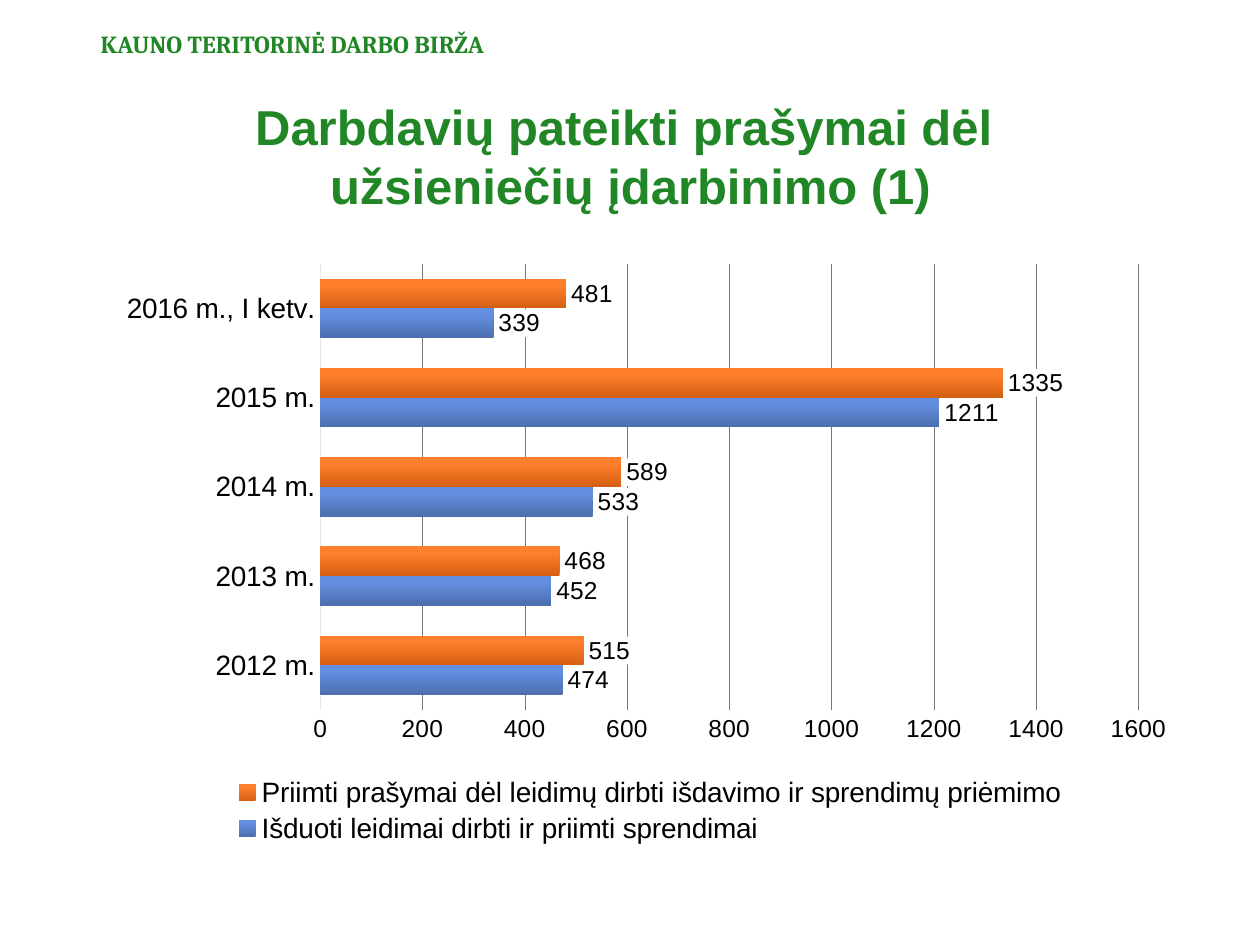
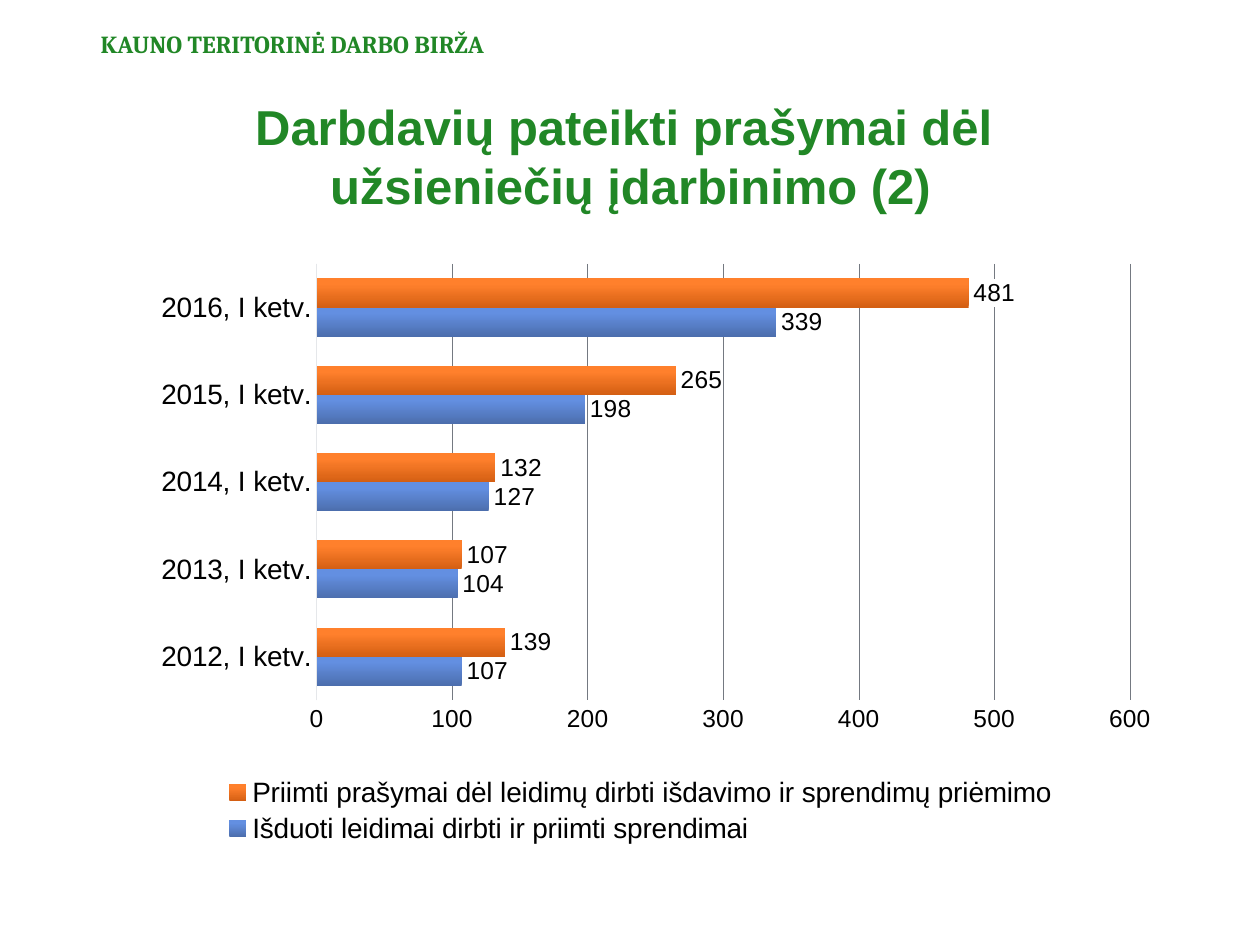
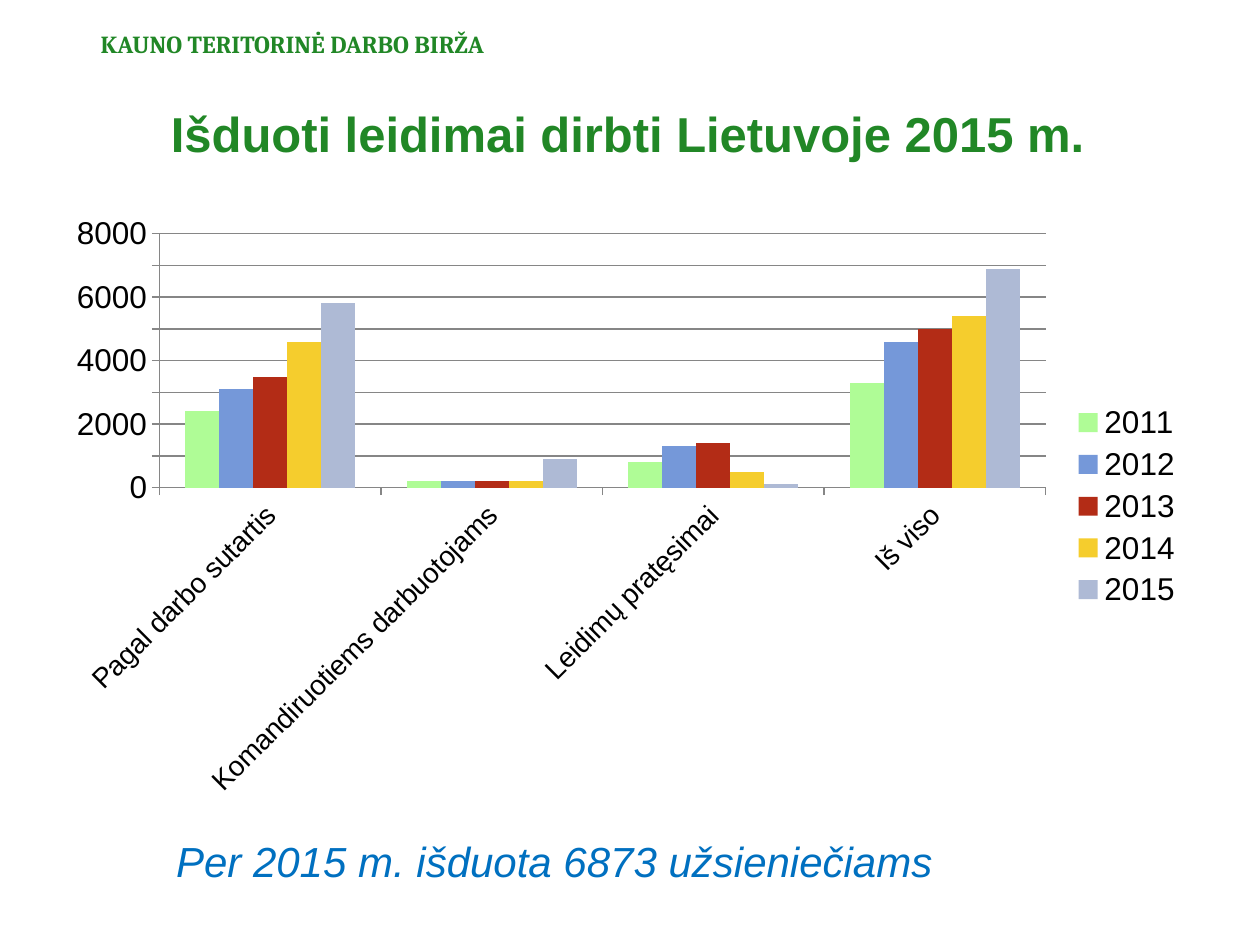
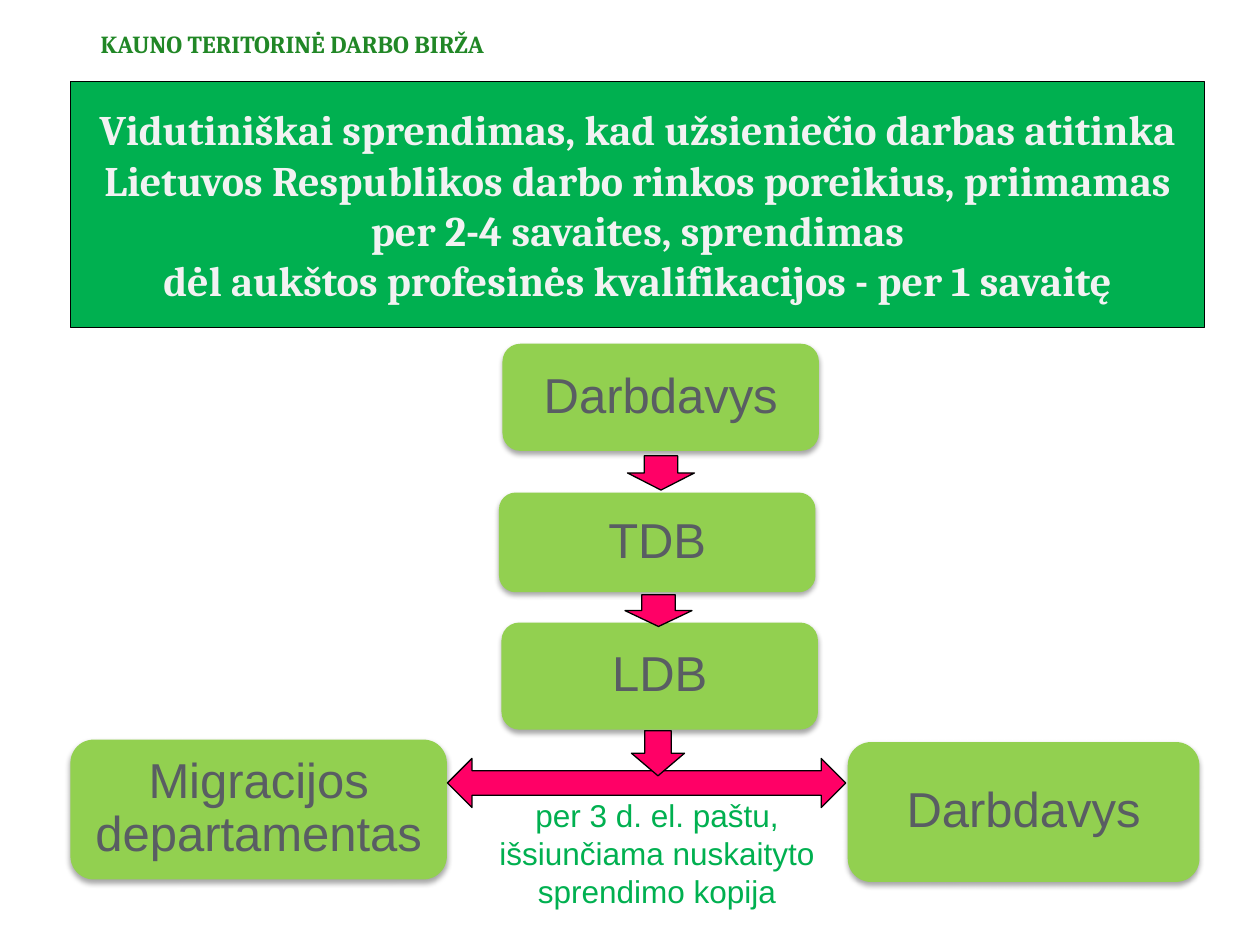
from pptx import Presentation
from pptx.chart.data import CategoryChartData
from pptx.dml.color import RGBColor
from pptx.enum import chart as ch, shapes as sh, text as tx
from pptx.oxml import parse_xml
from pptx.oxml.ns import nsdecls, qn
from pptx.util import Cm, Pt

BLACK = RGBColor(0x00, 0x00, 0x00)
PALE = RGBColor(0xF2, 0xF2, 0xF2)
GREEN = RGBColor(0x21, 0x87, 0x26)
BAND = RGBColor(0x00, 0xB0, 0x50)
LIME = RGBColor(0x92, 0xD0, 0x50)
PINK = RGBColor(0xFF, 0x00, 0x66)
BLUE = RGBColor(0x00, 0x70, 0xC0)
SLATE = RGBColor(0x59, 0x5D, 0x63)
AXIS = RGBColor(0xE5, 0xE7, 0xEA)
GRID = RGBColor(0x74, 0x79, 0x81)
GRAY = RGBColor(0x86, 0x86, 0x86)
FADES = [(RGBColor(0x4C, 0x6E, 0xAD), RGBColor(0x63, 0x8F, 0xE1)),
         (RGBColor(0xD4, 0x5F, 0x13), RGBColor(0xFF, 0x80, 0x2C))]
HUES = [RGBColor(0xAF, 0xFC, 0x96), RGBColor(0x75, 0x98, 0xD9),
        RGBColor(0xB3, 0x2C, 0x16), RGBColor(0xF5, 0xCD, 0x2D),
        RGBColor(0xAE, 0xBA, 0xD5)]

HEAD = dict(name="Cambria", size=Pt(14), bold=True)
TITLE = dict(name="Arial", size=Pt(28), bold=True)
LEAD = dict(name="Cambria", size=Pt(24), bold=True)
NOTE = dict(name="Arial", size=Pt(24), italic=True)
HINT = dict(name="Arial", size=Pt(18))
STEP = dict(name="Arial", size=Pt(28))

MID, TOP = tx.MSO_ANCHOR.MIDDLE, tx.MSO_ANCHOR.TOP
LEFT, CENTER = tx.PP_ALIGN.LEFT, tx.PP_ALIGN.CENTER
FORM = sh.MSO_SHAPE


def put(shape, words, form, hue, align=CENTER, anchor=MID):
    """Write words into a shape in one text format."""
    frame = shape.text_frame
    frame.word_wrap = True
    frame.vertical_anchor = anchor
    frame.text = words
    para = frame.paragraphs[0]
    para.alignment = align
    for key, val in form.items():
        setattr(para.runs[0].font, key, val)
    for run in para.runs:
        for key, val in form.items():
            setattr(run.font, key, val)
        run.font.color.rgb = hue
    return para


def graph(slide, kind, box, cats, rows, size, gap, place):
    """Add a chart with the shared font, legend and bar settings."""
    data = CategoryChartData()
    data.categories = cats
    for name, vals in rows.items():
        data.add_series(name, vals)
    chart = slide.shapes.add_chart(kind, *map(Cm, box), data).chart
    chart.has_title = False
    chart.font.name, chart.font.size = "Arial", Pt(size)
    chart.font.color.rgb = BLACK
    chart.has_legend = True
    chart.legend.position = place
    chart.legend.include_in_layout = False
    plot = chart.plots[0]
    plot.gap_width, plot.overlap, plot.vary_by_categories = gap, 0, False
    for row in plot.series:
        row.invert_if_negative = False
    return chart


deck = Presentation()
deck.slide_width, deck.slide_height = Cm(25.4), Cm(19.05)
for _ in range(4):
    page = deck.slides.add_slide(deck.slide_layouts[6])
    head = page.shapes.add_textbox(Cm(1.78), Cm(0.46), Cm(13.41), Cm(0.86))
    put(head, "KAUNO TERITORINĖ DARBO BIRŽA", HEAD, GREEN, LEFT, TOP)
pages = list(deck.slides)

# Titles of the chart slides
ASK = "Darbdavių pateikti prašymai dėl \vužsieniečių įdarbinimo "
titles = [(0.71, 2.13, ASK + "(1)"), (0.71, 2.13, ASK + "(2)"),
          (0.79, 1.68, "Išduoti leidimai dirbti Lietuvoje 2015 m. ")]
for page, (x, y, words) in zip(pages, titles):
    box = page.shapes.add_textbox(Cm(x), Cm(y), Cm(24), Cm(2.01))
    put(box, words, TITLE, GREEN)

# Slides 1 and 2: requests and permits as bars
YEARS = range(2012, 2017)
GIVEN = "Išduoti leidimai dirbti ir priimti sprendimai"
ASKED = "Priimti prašymai dėl leidimų dirbti išdavimo ir sprendimų priėmimo"
bars = [
    (21.59, [f"{y} m." for y in YEARS[:-1]] + ["2016 m., I ketv."],
     {GIVEN: (474, 452, 533, 1211, 339), ASKED: (515, 468, 589, 1335, 481)},
     dict(x=0.192, y=0.032, w=0.764, h=0.738)),
    (21.21, [f"{y}, I ketv." for y in YEARS],
     {GIVEN: (107, 104, 127, 198, 339), ASKED: (139, 107, 132, 265, 481)},
     dict(x=0.192, y=0.032, w=0.773, h=0.722)),
]
for page, (wide, cats, rows, area) in zip(pages, bars):
    chart = graph(page, ch.XL_CHART_TYPE.BAR_CLUSTERED, (2.31, 4.93, wide, 12.19),
                  cats, rows, 16, 100, ch.XL_LEGEND_POSITION.BOTTOM)
    for axis in (chart.category_axis, chart.value_axis):
        axis.major_tick_mark = axis.minor_tick_mark = ch.XL_TICK_MARK.NONE
    line = chart.category_axis.format.line
    line.color.rgb, line.width = AXIS, Pt(0.75)
    axis = chart.value_axis
    axis.tick_labels.font.size = Pt(14)
    axis.format.line.fill.background()
    line = axis.major_gridlines.format.line
    line.color.rgb, line.width = GRID, Pt(0.25)

    for row, fade in zip(chart.plots[0].series, FADES):
        fill = row.format.fill
        fill.gradient()
        fill.gradient_angle = 90
        for stop, hue, spot in zip(fill.gradient_stops, fade, (0, 0.8)):
            stop.color.rgb, stop.position = hue, spot
        tags = row.data_labels
        tags.show_value = True
        tags.font.name, tags.font.size = "Arial", Pt(14)
        tags.font.color.rgb = BLACK
        tags.position = ch.XL_LABEL_POSITION.OUTSIDE_END
        tags._element.find(qn("c:txPr")).addprevious(parse_xml(
            f'<c:spPr {nsdecls("c", "a")}><a:solidFill>'
            '<a:srgbClr val="FFFFFF"/></a:solidFill></c:spPr>'))

    frame = chart._chartSpace.chart.plotArea
    for old in frame.findall(qn("c:layout")):
        frame.remove(old)
    spots = "".join(f'<c:{k} val="{v}"/>' for k, v in area.items())
    frame.insert(0, parse_xml(
        f'<c:layout {nsdecls("c")}><c:manualLayout><c:layoutTarget val="inner"/>'
        f'<c:xMode val="edge"/><c:yMode val="edge"/>{spots}'
        '</c:manualLayout></c:layout>'))

# Slide 3: permits by kind and year
page = pages[2]
kinds = ["Pagal darbo sutartis", "Komandiruotiems darbuotojams",
         "Leidimų pratęsimai", "Iš viso"]
rows = {"2011": (2400, 200, 800, 3300), "2012": (3100, 200, 1300, 4600),
        "2013": (3500, 200, 1400, 5000), "2014": (4600, 200, 500, 5400),
        "2015": (5800, 900, 100, 6900)}
chart = graph(page, ch.XL_CHART_TYPE.COLUMN_CLUSTERED, (1.09, 4.11, 23.01, 12.19),
              kinds, rows, 18, 150, ch.XL_LEGEND_POSITION.RIGHT)
for row, hue in zip(chart.plots[0].series, HUES):
    row.format.fill.solid()
    row.format.fill.fore_color.rgb = hue
axis = chart.category_axis
axis.tick_labels.font.size = Pt(16)
axis._element.txPr.find(qn("a:bodyPr")).set("rot", "-2700000")
value = chart.value_axis
value.maximum_scale, value.major_unit = 8000, 1000
for part in (axis, value, value.major_gridlines):
    part.format.line.color.rgb = GRAY
    part.format.line.width = Pt(0.75)
box = page.shapes.add_textbox(Cm(3.3), Cm(16.71), Cm(15.93), Cm(1.27))
put(box, "Per 2015 m. išduota 6873 užsieniečiams", NOTE, BLUE, LEFT, TOP)

# Slide 4: path of a decision
page = pages[3]
box = page.shapes.add_textbox(Cm(9.55), Cm(15.93), Cm(7.39), Cm(2.29))
put(box, "per 3 d. el. paštu, išsiunčiama nuskaityto sprendimo kopija",
    HINT, BAND, anchor=TOP)

LAW = ("Vidutiniškai sprendimas, kad užsieniečio darbas atitinka Lietuvos "
       "Respublikos darbo rinkos poreikius, priimamas per 2-4 savaites, sprendimas"
       "\vdėl aukštos profesinės kvalifikacijos - per 1 savaitę")
parts = [
    (FORM.RECTANGLE, 1.42, 1.65, 22.86, 4.95, BAND, LAW),
    (FORM.ROUNDED_RECTANGLE, 10.13, 6.93, 6.38, 2.16, LIME, "Darbdavys"),
    (FORM.ROUNDED_RECTANGLE, 10.06, 9.93, 6.38, 2.01, LIME, "TDB"),
    (FORM.ROUNDED_RECTANGLE, 10.11, 12.55, 6.38, 2.16, LIME, "LDB"),
    (FORM.ROUNDED_RECTANGLE, 17.09, 14.96, 7.09, 2.82, LIME, "Darbdavys"),
    (FORM.ROUNDED_RECTANGLE, 1.42, 14.91, 7.59, 2.82, LIME, "Migracijos departamentas"),
    (FORM.DOWN_ARROW, 12.65, 9.19, 1.35, 0.69, PINK, ""),
    (FORM.DOWN_ARROW, 12.6, 11.99, 1.35, 0.64, PINK, ""),
    (FORM.LEFT_RIGHT_ARROW, 9.02, 15.29, 8.03, 0.99, PINK, ""),
    (FORM.DOWN_ARROW, 12.73, 14.73, 1.07, 0.91, PINK, ""),
]
for kind, x, y, w, h, hue, words in parts:
    shape = page.shapes.add_shape(kind, Cm(x), Cm(y), Cm(w), Cm(h))
    shape.shadow.inherit = False
    shape.fill.solid()
    shape.fill.fore_color.rgb = hue
    if hue == LIME:
        shape.line.fill.background()
        para = put(shape, words, STEP, SLATE)
        para.line_spacing = 0.9
        shape._element.spPr.find(qn("a:effectLst")).append(parse_xml(
            f'<a:outerShdw {nsdecls("a")} blurRad="39370" dist="22860" dir="5400000" '
            'rotWithShape="0"><a:srgbClr val="000000"><a:alpha val="35000"/>'
            '</a:srgbClr></a:outerShdw>'))
    else:
        shape.line.color.rgb, shape.line.width = BLACK, Pt(0.75)
        if words:
            put(shape, words, LEAD, PALE)

deck.save("out.pptx")
